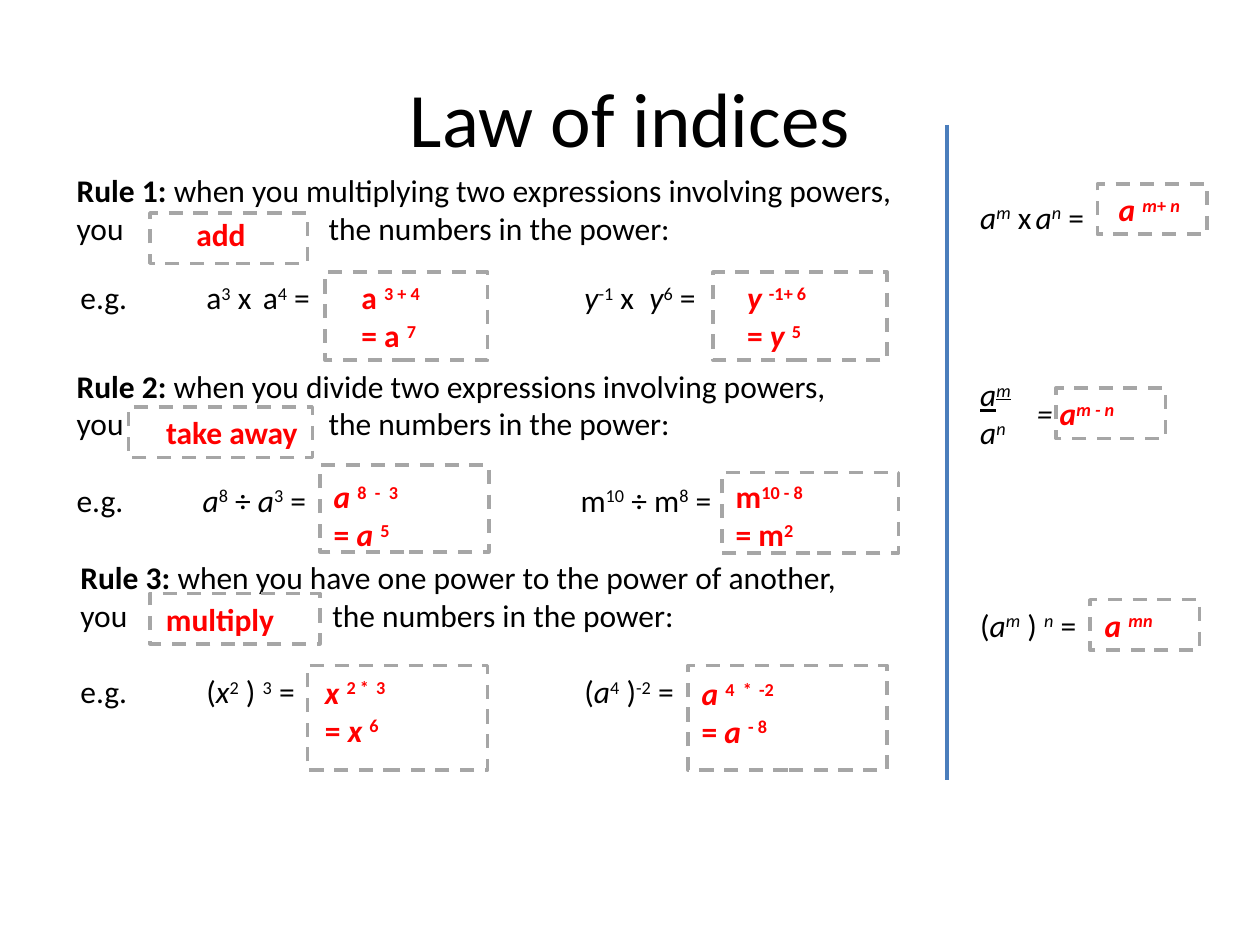
import pptx
import pptx.dml.color
import pptx.enum.dml
import pptx.enum.shapes
import pptx.enum.text
import pptx.oxml
import pptx.oxml.ns
import pptx.util

Pt = pptx.util.Pt
COLORS = {"ink": "000000", "answer": "FF0000", "frame": "A6A6A6", "divider": "4B7EBC"}
FONT = "Calibri"
BODY_SIZE = 18
EXAMPLE_GAP = 22
TAB_STEP = 72

RULES = [
    ((36.7, 94.3, 538.6, 51.1),
     [[("Rule 1: ", "b"), ("when you multiplying two expressions involving powers,", "")],
      [("you \t\tthe numbers in the power:", "")]]),
    ((36.7, 205.9, 516.2, 108.7),
     [[("Rule 2: ", "b"), ("when you divide two expressions involving powers,", "")],
      [("you \t\tthe numbers in the power:", "")],
      [("e.g. \t", ""), ("a", "i"), ("8", "^"), (" ÷ ", ""), ("a", "i"), ("3", "^"),
       (" = \t\t\tm", ""), ("10", "^"), (" ÷ m", ""), ("8", "^"), (" =", "")]]),
    ((38.9, 315.4, 516.2, 94.3),
     [[("Rule 3: ", "b"), ("when you have one power to the power of another,", "")],
      [("you \t\tthe numbers in the power:", "")],
      [("e.g. \t(", ""), ("x", "i"), ("2", "^"), (" ) ", ""), ("3", "^"),
       (" = \t\t\t(", ""), ("a", "i"), ("4", "^"), (" )", ""), ("-2", "^"), (" =", "")]]),
    ((38.9, 155.5, 480.2, 28.8),
     [[("e.g. \ta", ""), ("3", "^"), (" x ", ""), (" ", "^"), ("a", ""), ("4", "^"),
       (" = \t\t\t", ""), ("y", "i"), ("-1", "^"), (" x ", ""), ("  ", "^"),
       ("y", "i"), ("6", "^"), (" =", "")]]),
]

FORMULAS = [
    ((553, 211, 33.1, 51.1), [[("a", "iu"), ("m", "iu^")], [("a", "i"), ("n", "i^")]]),
    ((553, 109.4, 77, 28.8),
     [[("a", "i"), ("m", "i^"), (" x", ""), (" ", "^"), ("a", "i"), ("n", "i^"), (" =", "")]]),
    ((585.4, 221.8, 62.6, 28.8), [[("= ", "i"), ("a", "bir"), ("m - n", "bir^")]]),
    ((553, 342.7, 72, 28.8),
     [[("(", ""), ("a", "i"), ("m", "i^"), (" ) ", ""), ("n", "i^"), (" =", "")]]),
]

ANSWERS = [
    ((105.1, 119.5, 43.2, 28.8), [[("add", "br")]]),
    ((199.4, 155.5, 51.8, 51.1),
     [[("a ", "br"), ("3 + 4", "br^")], [("= a ", "br"), ("7", "br^")]]),
    ((419.8, 155.5, 54.7, 51.1),
     [[("y ", "bir"), ("-1+ 6", "br^")], [("= ", "br"), ("y ", "bir"), ("5", "br^")]]),
    ((632.2, 105.1, 53.3, 28.8),
     [[("a ", "bir"), ("m", "bir^"), ("+ ", "br^"), ("n", "bir^")]]),
    ((87.8, 232.6, 94.3, 28.8), [[("take away", "br")]]),
    ((183.6, 269.3, 64.1, 51.1),
     [[("a ", "bir"), ("8  -  3", "br^")], [("= ", "br"), ("a ", "bir"), ("5", "br^")]]),
    ((413.3, 269.3, 65.5, 51.1),
     [[("m", "br"), ("10 - 8", "br^")], [("= m", "br"), ("2", "br^")]]),
    ((87.8, 339.1, 77, 28.8), [[("multiply", "br")]]),
    ((624.2, 342.7, 44.6, 28.8), [[("a ", "bir"), ("mn", "bir^")]]),
    ((178.6, 380.9, 87.1, 51.1),
     [[("x ", "bir"), ("2 *", "br^"), (" ", "br"), ("3", "br^")],
      [("= ", "br"), ("x ", "bir"), ("6 \t", "br^")]]),
    ((393.8, 381.6, 64.1, 51.1),
     [[("a ", "bir"), ("4  *", "br^"), (" ", "br"), ("-2", "br^")],
      [("= ", "br"), ("a ", "bir"), ("- 8", "br^")]]),
]

FRAMES = [
    (407.5, 155.5, 99.4, 50.4), (85.7, 121.7, 90, 28.8), (185.8, 155.5, 92.9, 50.4),
    (85.7, 339.1, 97.2, 28.8), (73.4, 232.6, 105.1, 28.8), (182.9, 265.7, 96.5, 49.7),
    (412.6, 270, 100.8, 46.1), (175.7, 380.2, 103, 59.8), (393.1, 380.2, 113.8, 59.8),
    (627.1, 105.1, 62.6, 28.8), (603.4, 221.8, 62.6, 28.8), (622.8, 342.7, 62.6, 28.8),
]


def rgb(role):
    return pptx.dml.color.RGBColor.from_string(COLORS[role])


def add_run(paragraph, text, style, size=BODY_SIZE):
    run = paragraph.add_run()
    run.text = text
    run.font.name = FONT
    run.font.size = Pt(size)
    run.font.bold = "b" in style
    run.font.italic = "i" in style
    run.font.underline = "u" in style
    run.font.color.rgb = rgb("answer" if "r" in style else "ink")
    if "^" in style:
        run._r.get_or_add_rPr().set("baseline", "30000")


def add_title(slide, text):
    title = slide.shapes.title
    title.left, title.top, title.width, title.height = map(Pt, (36, 21.6, 648, 90))
    title.text_frame.vertical_anchor = pptx.enum.text.MSO_ANCHOR.MIDDLE
    heading = title.text_frame.paragraphs[0]
    heading.alignment = pptx.enum.text.PP_ALIGN.CENTER
    add_run(heading, text, "", 44)


def add_math_text(slide, place, lines, wrap=False):
    frame = slide.shapes.add_textbox(*map(Pt, place)).text_frame
    frame.word_wrap = wrap
    frame.auto_size = pptx.enum.text.MSO_AUTO_SIZE.SHAPE_TO_FIT_TEXT
    for index, line in enumerate(lines):
        paragraph = frame.add_paragraph() if index else frame.paragraphs[0]
        paragraph._p.get_or_add_pPr().set("defTabSz", str(Pt(TAB_STEP)))
        if index == 2:
            paragraph.space_before = Pt(EXAMPLE_GAP)
        for text, style in line:
            add_run(paragraph, text, style)


def add_answer_frame(slide, place):
    frame = slide.shapes.add_shape(pptx.enum.shapes.MSO_SHAPE.RECTANGLE, *map(Pt, place))
    frame.shadow.inherit = False
    frame.fill.background()
    frame.line.color.rgb = rgb("frame")
    frame.line.width = Pt(2)
    frame.line.dash_style = pptx.enum.dml.MSO_LINE.DASH


def add_divider(slide, x, top, bottom):
    divider = slide.shapes.add_connector(
        pptx.enum.shapes.MSO_CONNECTOR.STRAIGHT, Pt(x), Pt(top), Pt(x), Pt(bottom))
    divider.line.color.rgb = rgb("divider")
    divider.line.width = Pt(2.25)
    properties = divider._element.find(pptx.oxml.ns.qn("p:spPr"))
    properties.append(pptx.oxml.parse_xml(
        "<a:effectLst %s/>" % pptx.oxml.ns.nsdecls("a")))


def main():
    deck = pptx.Presentation()
    deck.slide_width, deck.slide_height = Pt(720), Pt(540)
    slide = deck.slides.add_slide(deck.slide_layouts.get_by_name("Title Only"))
    add_title(slide, "Law of indices")
    for place, lines in RULES:
        add_math_text(slide, place, lines, wrap=True)
    for place, lines in FORMULAS + ANSWERS:
        add_math_text(slide, place, lines)
    for place in FRAMES:
        add_answer_frame(slide, place)
    add_divider(slide, 541.4, 71.3, 445.7)
    deck.save("out.pptx")


if __name__ == "__main__":
    main()
